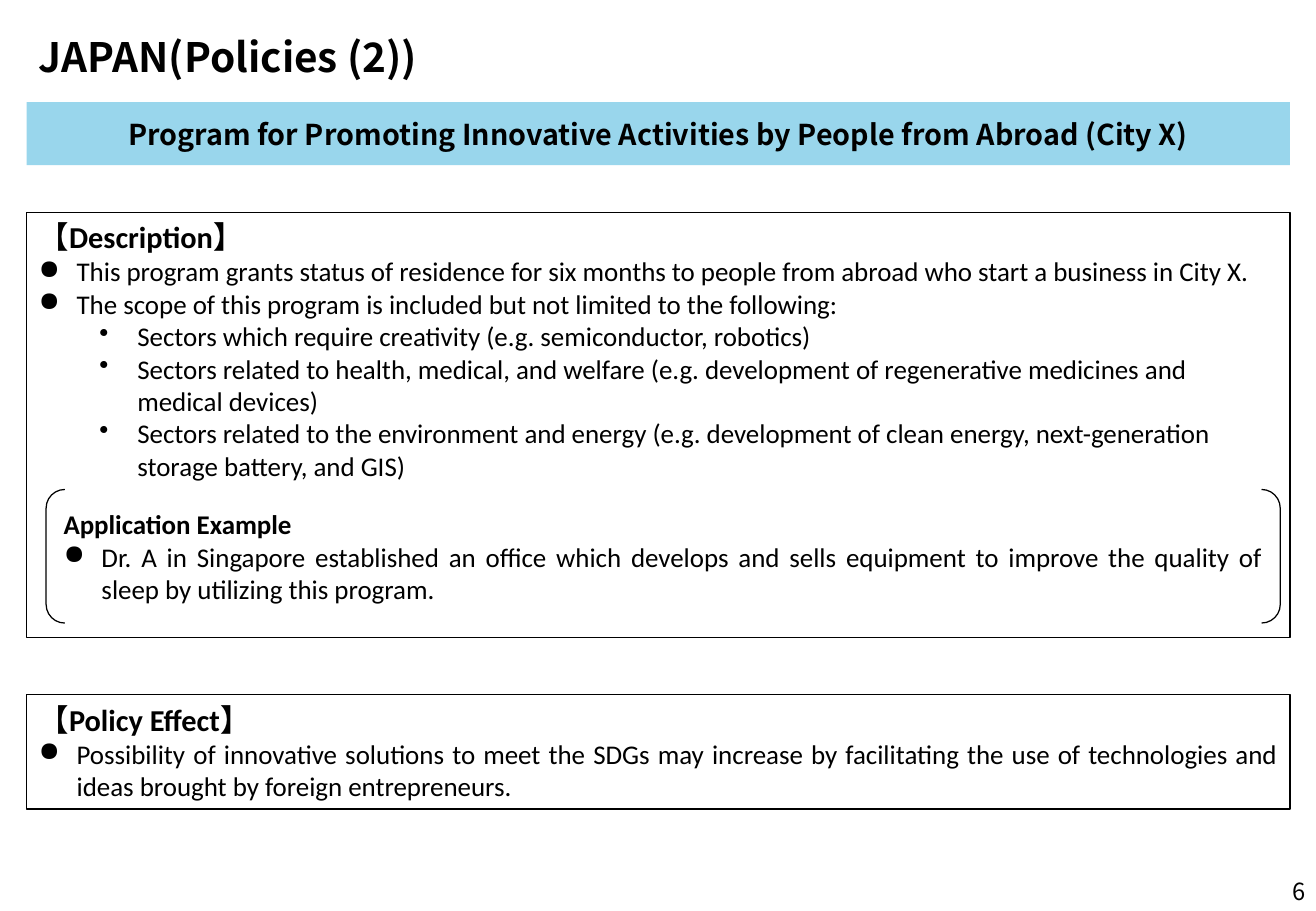
import pptx
import pptx.dml.color
import pptx.enum.shapes
import pptx.enum.text
import pptx.util
import lxml.etree

Pt = pptx.util.Pt
SHAPES = pptx.enum.shapes.MSO_SHAPE
ALIGN = pptx.enum.text.PP_ALIGN
ANCHOR = pptx.enum.text.MSO_ANCHOR
HEADING_FONT = "Noto Sans CJK JP"
BODY_FONT = "Calibri"
HANGING = Pt(22.5)


def color(hex_value):
    return pptx.dml.color.RGBColor.from_string(hex_value)


def write(frame, anchor, font_name, lines):
    """Fill a text frame; each line is (text, size, bold, alignment, bullet, level)."""
    frame.word_wrap = True
    frame.auto_size = pptx.enum.text.MSO_AUTO_SIZE.NONE
    frame.vertical_anchor = anchor
    for index, (text, size, bold, alignment, bullet, level) in enumerate(lines):
        paragraph = frame.add_paragraph() if index else frame.paragraphs[0]
        paragraph.alignment = alignment
        paragraph.level = level
        run = paragraph.add_run()
        run.text = text
        font_format = {"name": font_name, "size": Pt(size), "bold": bold}
        for attribute, value in font_format.items():
            setattr(run.font, attribute, value)
        run.font.color.rgb = color("000000")
        if bullet:
            properties = paragraph._p.get_or_add_pPr()
            properties.set("marL", str(HANGING + level * Pt(36)))
            properties.set("indent", str(-HANGING))
            mark = lxml.etree.SubElement(properties, pptx.oxml.ns.qn("a:buChar"))
            mark.set("char", bullet)


presentation = pptx.Presentation()
presentation.slide_width = Pt(780)
presentation.slide_height = Pt(540)
slide = presentation.slides.add_slide(presentation.slide_layouts[5])

LEFT, WIDTH = 15.84, 748.8

title = slide.shapes.title
title_place = {"left": LEFT, "top": 15.12, "width": WIDTH, "height": 36}
for attribute, value in title_place.items():
    setattr(title, attribute, Pt(value))
write(title.text_frame, ANCHOR.MIDDLE, HEADING_FONT,
      [("JAPAN(Policies (2))", 24, True, ALIGN.LEFT, None, 0)])

page_number = slide.shapes.add_textbox(Pt(599), Pt(514), Pt(182), Pt(28.8))
write(page_number.text_frame, ANCHOR.MIDDLE, HEADING_FONT,
      [("6", 14, False, ALIGN.RIGHT, None, 0)])

banner_lines = [
    ("Program for Promoting Innovative Activities by People from Abroad (City X)",
     17, True, ALIGN.CENTER, None, 0),
]
description_lines = [
    ("【Description】", 18, True, ALIGN.LEFT, None, 0),
    ("This program grants status of residence for six months to people from abroad "
     "who start a business in City X.", 16, False, ALIGN.LEFT, "●", 0),
    ("The scope of this program is included but not limited to the following:",
     16, False, ALIGN.LEFT, "●", 0),
    ("Sectors which require creativity (e.g. semiconductor, robotics)",
     16, False, ALIGN.LEFT, "•", 1),
    ("Sectors related to health, medical, and welfare (e.g. development of "
     "regenerative medicines and medical devices)", 16, False, ALIGN.LEFT, "•", 1),
    ("Sectors related to the environment and energy (e.g. development of clean energy, "
     "next-generation storage battery, and GIS)", 16, False, ALIGN.LEFT, "•", 1),
]
effect_lines = [
    ("【Policy Effect】", 18, True, ALIGN.LEFT, None, 0),
    ("Possibility of innovative solutions to meet the SDGs may increase by facilitating "
     "the use of technologies and ideas brought by foreign entrepreneurs.",
     16, False, ALIGN.JUSTIFY, "●", 0),
]
example_lines = [
    ("Application Example", 16, True, ALIGN.LEFT, None, 0),
    ("Dr. A in Singapore established an office which develops and sells equipment to "
     "improve the quality of sleep by utilizing this program.",
     16, False, ALIGN.JUSTIFY, "●", 0),
]

# kind, left, top, width, height, fill, anchor, font, lines
sections = [
    (SHAPES.RECTANGLE, LEFT, 60.48, WIDTH, 37.44, "99D6EC",
     ANCHOR.MIDDLE, HEADING_FONT, banner_lines),
    (SHAPES.RECTANGLE, LEFT, 126, WIDTH, 252, None,
     ANCHOR.TOP, BODY_FONT, description_lines),
    (SHAPES.RECTANGLE, LEFT, 411.84, WIDTH, 67.68, None,
     ANCHOR.TOP, BODY_FONT, effect_lines),
    (SHAPES.DOUBLE_BRACKET, 27.36, 290.16, 731.52, 79.2, None,
     ANCHOR.MIDDLE, BODY_FONT, example_lines),
]
for kind, left, top, width, height, fill, anchor, font_name, lines in sections:
    section = slide.shapes.add_shape(kind, Pt(left), Pt(top), Pt(width), Pt(height))
    section.shadow.inherit = False
    if fill:
        section.fill.solid()
        section.fill.fore_color.rgb = color(fill)
        section.line.fill.background()
    else:
        section.fill.background()
        section.line.color.rgb = color("000000")
        section.line.width = Pt(0.75)
    if kind == SHAPES.DOUBLE_BRACKET:
        section.adjustments[0] = 0.14
    write(section.text_frame, anchor, font_name, lines)

presentation.save("out.pptx")
